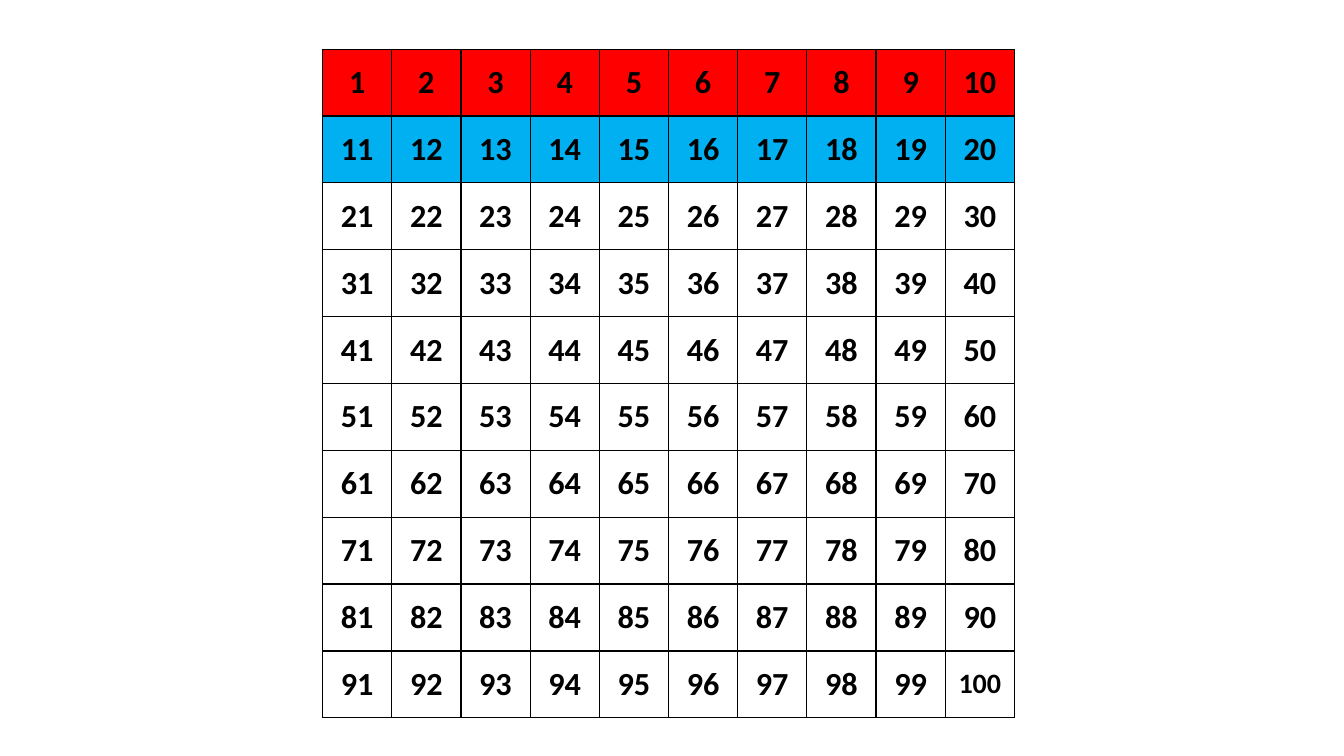
"""Build a hundred chart whose first two rows are coloured."""
from dataclasses import dataclass

import lxml.etree
import pptx
import pptx.dml.color
import pptx.enum.text
import pptx.oxml.ns
import pptx.util

PAGE_WIDTH = pptx.util.Inches(13.33)
PAGE_HEIGHT = pptx.util.Inches(7.5)
GRID_SIZE = 10
GRID_LEFT, GRID_TOP = 0.24, 0.065
GRID_WIDTH, GRID_HEIGHT = 0.515, 0.885
ROW_FILLS = {0: "FF0000", 1: "00B0F0"}
INK = "000000"


@dataclass(frozen=True)
class NumberCell:
    row: int
    column: int

    @property
    def number(self) -> int:
        return self.row * GRID_SIZE + self.column + 1

    @property
    def font_size(self) -> int:
        return 20 if self.number >= 100 else 23


def colour(code: str) -> pptx.dml.color.RGBColor:
    return pptx.dml.color.RGBColor.from_string(code)


def add_borders(cell: pptx.table._Cell) -> None:
    properties = cell._tc.get_or_add_tcPr()
    qualified = pptx.oxml.ns.qn
    for side in ("lnL", "lnR", "lnT", "lnB"):
        line = lxml.etree.SubElement(
            properties, qualified(f"a:{side}"), w=str(pptx.util.Pt(1))
        )
        fill = lxml.etree.SubElement(line, qualified("a:solidFill"))
        lxml.etree.SubElement(fill, qualified("a:srgbClr"), val=INK)


def draw_number(table: pptx.table.Table, item: NumberCell) -> None:
    cell = table.cell(item.row, item.column)
    add_borders(cell)
    if item.row in ROW_FILLS:
        cell.fill.solid()
        cell.fill.fore_color.rgb = colour(ROW_FILLS[item.row])
    else:
        cell.fill.background()
    cell.vertical_anchor = pptx.enum.text.MSO_ANCHOR.MIDDLE
    cell.margin_left = cell.margin_right = pptx.util.Inches(0.13)
    cell.margin_top = cell.margin_bottom = pptx.util.Inches(0.06)
    para = cell.text_frame.paragraphs[0]
    para.alignment = pptx.enum.text.PP_ALIGN.CENTER
    span = para.add_run()
    span.text = str(item.number)
    span.font.name = "Calibri"
    span.font.size = pptx.util.Pt(item.font_size)
    span.font.bold = True
    span.font.color.rgb = colour(INK)


def main() -> None:
    deck = pptx.Presentation()
    deck.slide_width, deck.slide_height = PAGE_WIDTH, PAGE_HEIGHT
    page = deck.slides.add_slide(deck.slide_layouts[6])
    table = page.shapes.add_table(
        GRID_SIZE,
        GRID_SIZE,
        round(GRID_LEFT * PAGE_WIDTH),
        round(GRID_TOP * PAGE_HEIGHT),
        round(GRID_WIDTH * PAGE_WIDTH),
        round(GRID_HEIGHT * PAGE_HEIGHT),
    ).table
    table.first_row = table.horz_banding = False
    for row in range(GRID_SIZE):
        for column in range(GRID_SIZE):
            draw_number(table, NumberCell(row, column))
    deck.save("out.pptx")


if __name__ == "__main__":
    main()
